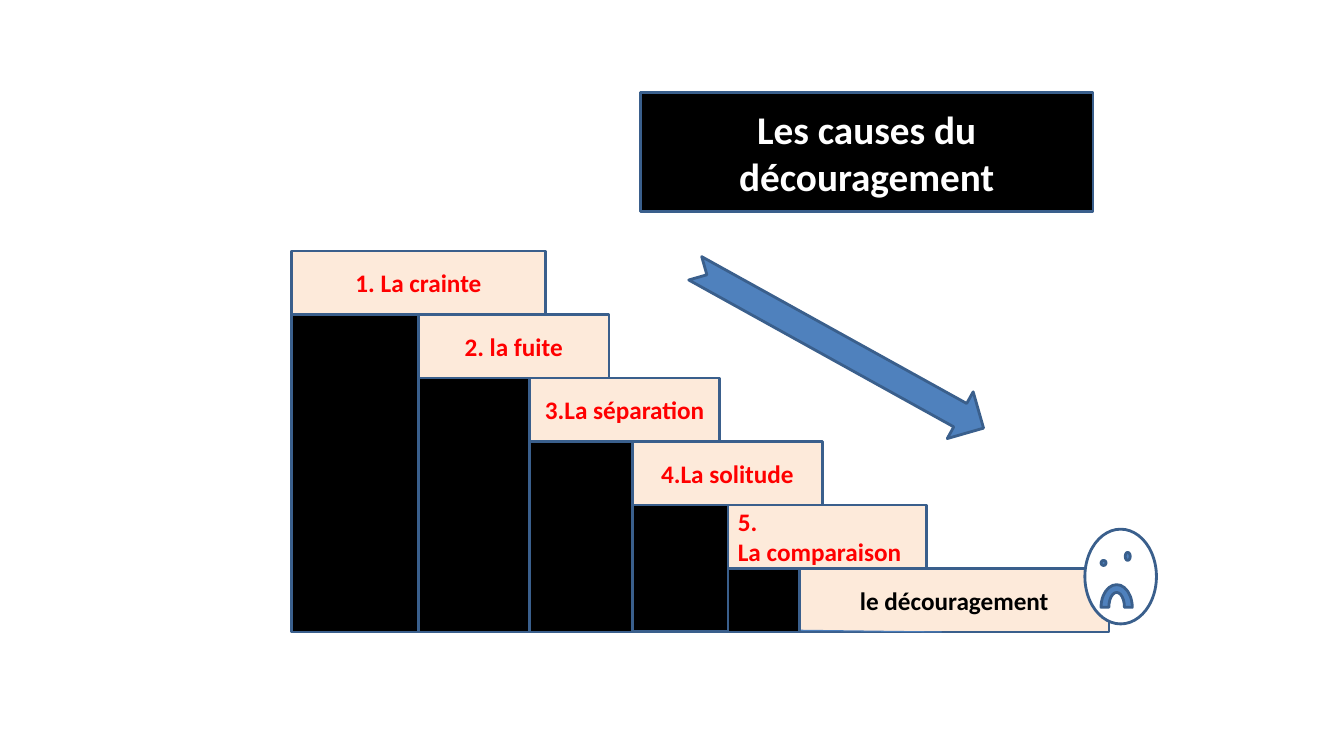
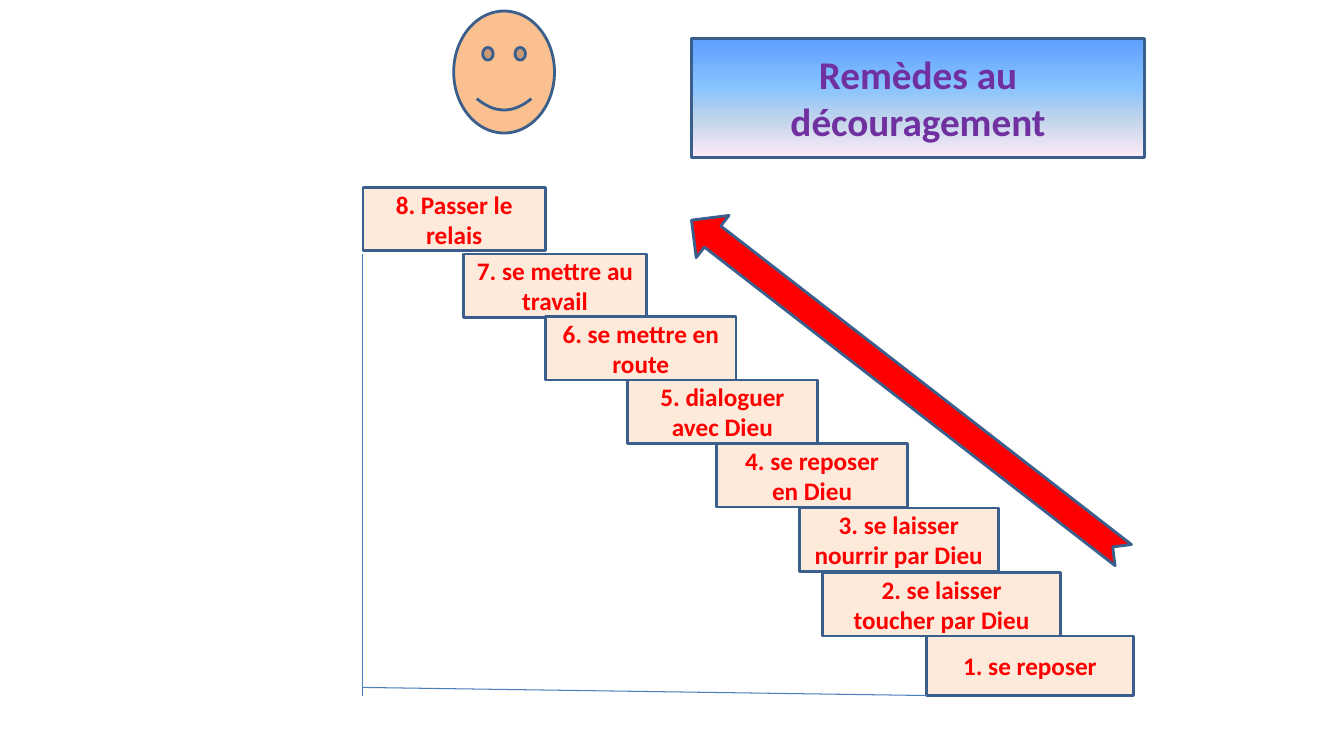
from dataclasses import dataclass
from itertools import pairwise

from lxml.etree import SubElement
from pptx import Presentation
from pptx.dml.color import RGBColor
from pptx.enum.shapes import MSO_CONNECTOR, MSO_SHAPE
from pptx.enum.text import MSO_ANCHOR, MSO_AUTO_SIZE, PP_ALIGN
from pptx.oxml.ns import qn
from pptx.shapes.autoshape import Shape
from pptx.slide import Slide
from pptx.util import Emu, Pt

PX = 9144  # EMU in one px: 100 px to the inch
FONT = "Calibri"
BLACK = RGBColor(0x00, 0x00, 0x00)
WHITE = RGBColor(0xFF, 0xFF, 0xFF)
RED = RGBColor(0xFF, 0x00, 0x00)
PURPLE = RGBColor(0x70, 0x30, 0xA0)
CREAM = RGBColor(0xFD, 0xEA, 0xDA)
PEACH = RGBColor(0xFA, 0xC0, 0x90)
BLUE = RGBColor(0x4F, 0x81, 0xBD)
EDGE = RGBColor(0x3A, 0x5F, 0x8C)
THIN = RGBColor(0x4B, 0x7E, 0xBC)
SKY = [(0, "5E9EFF"), (40, "85C2FF"), (70, "C4D6EB"), (100, "FFEBFA")]

STEP_H = 63
TOP = 249
BASE = TOP + 6 * STEP_H


@dataclass
class Step:
    text: str
    left: int
    top: int
    width: int
    height: int = STEP_H
    color: RGBColor = RED
    align: PP_ALIGN = PP_ALIGN.CENTER


@dataclass
class Figure:
    kind: MSO_SHAPE
    left: int
    top: int
    width: int
    height: int
    fill: RGBColor
    turn: float = 0


def row(n: int) -> int:
    """Top of the nth step going down."""
    return TOP + n * STEP_H


CAUSES = [
    Step("1. La crainte", 289, row(0), 252),
    Step("2. la fuite", 415, row(1), 189),
    Step("3.La séparation", 525, row(2), 189),
    Step("4.La solitude", 627, row(3), 189),
    Step("5.\nLa comparaison", 722, row(4), 197, align=PP_ALIGN.LEFT),
    Step("le découragement", 793, row(5), 307, color=BLACK),
]
CURES = [
    Step("8. Passer le relais", 360, 186, 181),
    Step("7. se mettre au travail", 460, 252, 181),
    Step("6. se mettre en route", 541, 314, 189),
    Step("5. dialoguer\vavec Dieu", 622, 377, 189),
    Step("4. se reposer\ven Dieu", 711, 440, 189),
    Step("3. se laisser nourrir par Dieu", 793, 504, 197),
    Step("2. se laisser\vtoucher par Dieu", 816, 568, 236),
    Step("1. se reposer", 919, 631, 205, 59),
]
PILLARS = [
    Figure(MSO_SHAPE.RECTANGLE, step.left, below.top,
           below.left - step.left, BASE - below.top, BLACK)
    for step, below in pairwise(CAUSES)
]
SAD_FACE = [
    Figure(MSO_SHAPE.OVAL, 1076, 525, 71, 94, WHITE),
    Figure(MSO_SHAPE.BLOCK_ARC, 1092, 580, 31, 45, BLUE),
    Figure(MSO_SHAPE.OVAL, 1092, 556, 5, 5, BLUE),
    Figure(MSO_SHAPE.OVAL, 1116, 548, 5, 8, BLUE),
]
DOWN = Figure(MSO_SHAPE.NOTCHED_RIGHT_ARROW, 669, 319, 327, 53, BLUE, 29)
UP = Figure(MSO_SHAPE.NOTCHED_RIGHT_ARROW, 629, 358, 542, 53, RED, 217.8)
SMILE = Figure(MSO_SHAPE.SMILEY_FACE, 450, 11, 100, 121, PEACH)


def edge(shape: Shape) -> None:
    shape.line.color.rgb = EDGE
    shape.line.width = Pt(2)


def write(shape: Shape, text: str, size: int, color: RGBColor,
          align: PP_ALIGN = PP_ALIGN.CENTER) -> None:
    frame = shape.text_frame
    frame.text = text
    frame.word_wrap = True
    frame.auto_size = MSO_AUTO_SIZE.NONE
    frame.vertical_anchor = MSO_ANCHOR.MIDDLE
    for para in frame.paragraphs:
        para.alignment = align
        for run in para.runs:
            font = run.font
            font.name, font.size, font.bold = FONT, Pt(size), True
            font.color.rgb = color


def draw(slide: Slide, fig: Figure) -> Shape:
    box = (Emu(n * PX) for n in (fig.left, fig.top, fig.width, fig.height))
    shape = slide.shapes.add_shape(fig.kind, *box)
    shape.shadow.inherit = False
    shape.rotation = fig.turn
    shape.fill.solid()
    shape.fill.fore_color.rgb = fig.fill
    edge(shape)
    return shape


def stack(slide: Slide, steps: list[Step]) -> None:
    for step in steps:
        fig = Figure(MSO_SHAPE.RECTANGLE, step.left, step.top,
                     step.width, step.height, CREAM)
        write(draw(slide, fig), step.text, 18, step.color, step.align)


def rule(slide: Slide, *ends: int) -> None:
    """Thin line from x, y to x, y."""
    line = slide.shapes.add_connector(
        MSO_CONNECTOR.STRAIGHT, *(Emu(n * PX) for n in ends))
    line.line.color.rgb = THIN
    line.line.width = Pt(0.75)
    SubElement(line._element.spPr, qn("a:effectLst"))


def head(slide: Slide, text: str, left: int, top: int, color: RGBColor) -> Shape:
    """Turn the title placeholder into a rounded banner."""
    title = slide.shapes.title
    title.left, title.top = Emu(left * PX), Emu(top * PX)
    title.width, title.height = Emu(449 * PX), Emu(118 * PX)
    form = SubElement(title._element.spPr, qn("a:prstGeom"), prst="roundRect")
    SubElement(form, qn("a:avLst"))
    title.fill.solid()
    title.fill.fore_color.rgb = BLACK
    edge(title)
    write(title, text, 28, color)
    return title


def shade(shape: Shape, stops: list[tuple[int, str]]) -> None:
    """Fill from top to bottom with any number of stops."""
    shape.fill.gradient()
    shape.fill.gradient_angle = 270
    stop_list = shape._element.spPr.find(".//" + qn("a:gsLst"))
    stop_list.clear()
    for place, tint in stops:
        stop = SubElement(stop_list, qn("a:gs"), pos=str(place * 1000))
        SubElement(stop, qn("a:srgbClr"), val=tint)


def causes(slide: Slide) -> None:
    head(slide, "Les causes du découragement", 635, 92, WHITE)
    stack(slide, CAUSES)
    rule(slide, 289, 312, 289, 619)
    rule(slide, 934, BASE, 289, 619)
    for fig in [*PILLARS, *SAD_FACE, DOWN]:
        draw(slide, fig)


def cures(slide: Slide) -> None:
    title = head(slide, "Remèdes au découragement", 686, 38, PURPLE)
    shade(title, SKY)
    stack(slide, CURES)
    rule(slide, 360, 252, 360, 690)
    rule(slide, 919, 690, 360, 682)
    for fig in (UP, SMILE):
        draw(slide, fig)


def main() -> None:
    deck = Presentation()
    deck.slide_width, deck.slide_height = Emu(1333 * PX), Emu(750 * PX)
    for fill in (causes, cures):
        fill(deck.slides.add_slide(deck.slide_layouts[5]))
    deck.save("out.pptx")


if __name__ == "__main__":
    main()
